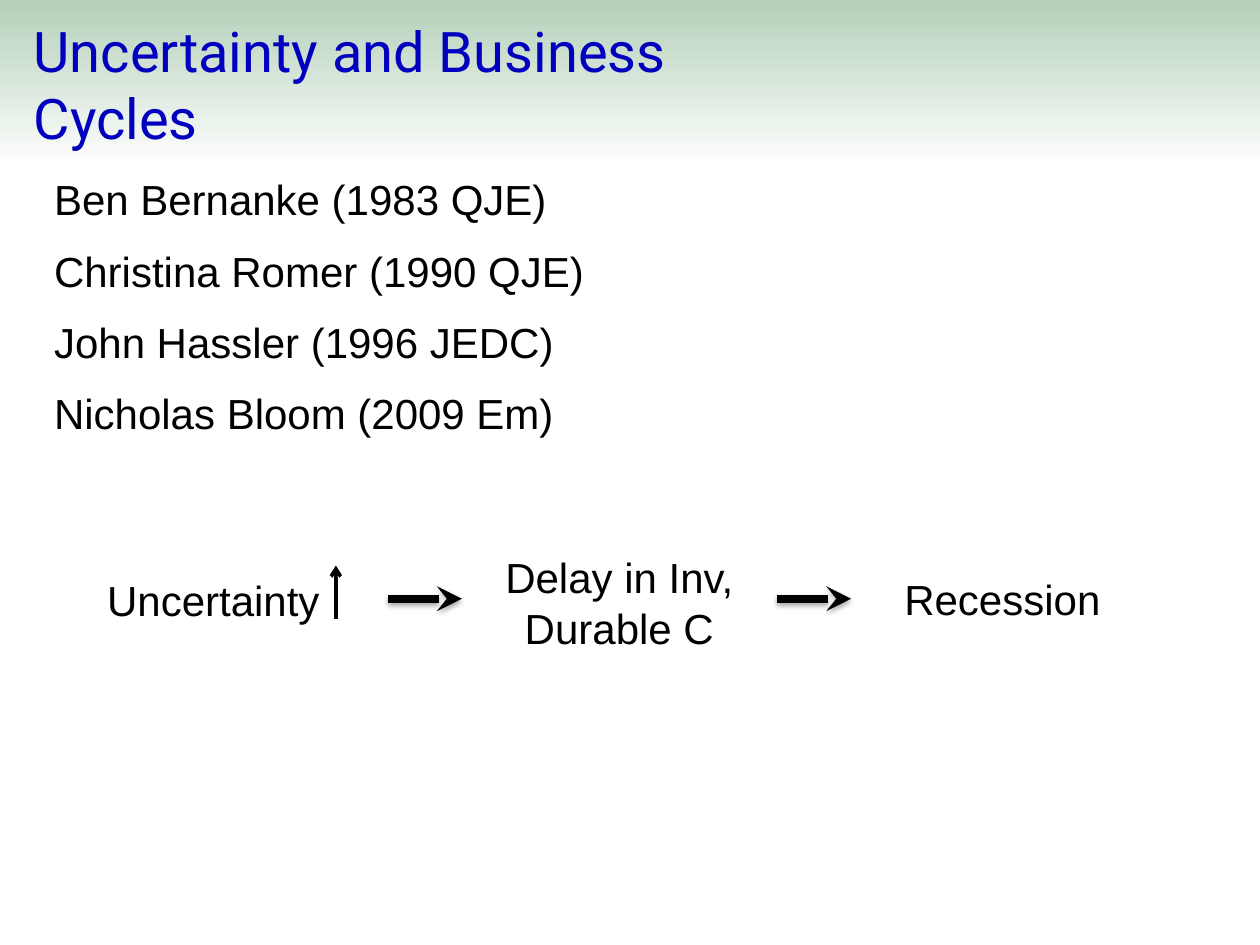
from lxml import etree
from pptx import Presentation
from pptx.dml.color import RGBColor
from pptx.enum import shapes, text
from pptx.oxml import ns
from pptx.util import Cm, Pt

TITLE = "Uncertainty and Business Cycles"
PAPERS = [
    "Ben Bernanke (1983 QJE)",
    "Christina Romer (1990 QJE)",
    "John Hassler (1996 JEDC)",
    "Nicholas Bloom (2009 Em)",
]
CHAIN = [
    (["Uncertainty"], 1.91, 11.46, 4.88, "LEFT"),
    (["Delay in Inv,", "Durable C"], 9.73, 11, 5.51, "CENTER"),
    (["Recession"], 17.98, 11.43, 4.88, "LEFT"),
]
STEPS = [7.82, 15.67]
COLORS = {"title": "0000BE", "text": "000000", "band": "B4D0B9", "page": "FFFFFF"}


def color(name):
    return RGBColor.from_string(COLORS[name])


def add_text(slide, lines, box, size=24, face="Arial", tint="text", align="LEFT", gap=0):
    frame = slide.shapes.add_textbox(*map(Cm, box)).text_frame
    frame.word_wrap = True
    for i, line in enumerate(lines):
        para = frame.paragraphs[0] if i == 0 else frame.add_paragraph()
        para.text = line
        para.alignment = getattr(text.PP_ALIGN, align)
        para.space_before = Pt(gap if i else 0)
        para.font.size = Pt(size)
        para.font.name = face
        para.font.color.rgb = color(tint)


def add_arrow(slide, ends, width, head, shadow=False):
    link = slide.shapes.add_connector(shapes.MSO_CONNECTOR.STRAIGHT, *map(Cm, ends))
    link.line.width = Pt(width)
    link.line.color.rgb = color("text")
    etree.SubElement(link.line._get_or_add_ln(), ns.qn("a:tailEnd"), type=head)
    effects = etree.SubElement(link._element.spPr, ns.qn("a:effectLst"))
    if shadow:
        outer = etree.SubElement(
            effects, ns.qn("a:outerShdw"), blurRad=str(Pt(3.1)), dist=str(Pt(1.8)),
            dir="5400000", rotWithShape="0")
        shade = etree.SubElement(outer, ns.qn("a:srgbClr"), val=COLORS["text"])
        etree.SubElement(shade, ns.qn("a:alpha"), val="35000")


def add_band(slide, width):
    band = slide.shapes.add_shape(shapes.MSO_SHAPE.RECTANGLE, 0, 0, width, Cm(3.39))
    band.shadow.inherit = False
    band.line.fill.background()
    band.fill.gradient()
    band.fill.gradient_angle = 270
    for stop, name, place in zip(band.fill.gradient_stops, ("band", "page"), (0, 1)):
        stop.color.rgb = color(name)
        stop.position = place


def main():
    deck = Presentation()
    deck.slide_width, deck.slide_height = Cm(25.4), Cm(19.05)
    slide = deck.slides.add_slide(deck.slide_layouts[6])
    add_band(slide, deck.slide_width)
    add_text(slide, [TITLE], (0.43, 0.2, 16, 1.63), 32, "Roboto", "title")
    add_text(slide, PAPERS, (0.84, 3.38, 23.29, 5.64), gap=12)
    for lines, left, top, width, align in CHAIN:
        add_text(slide, lines, (left, top, width, 1.27 * len(lines)), align=align)
    for left in STEPS:
        add_arrow(slide, (left, 12.07, left + 1.49, 12.07), 4.75, "stealth", True)
    add_arrow(slide, (6.77, 12.47, 6.77, 11.4), 2, "arrow")
    deck.save("out.pptx")


if __name__ == "__main__":
    main()
